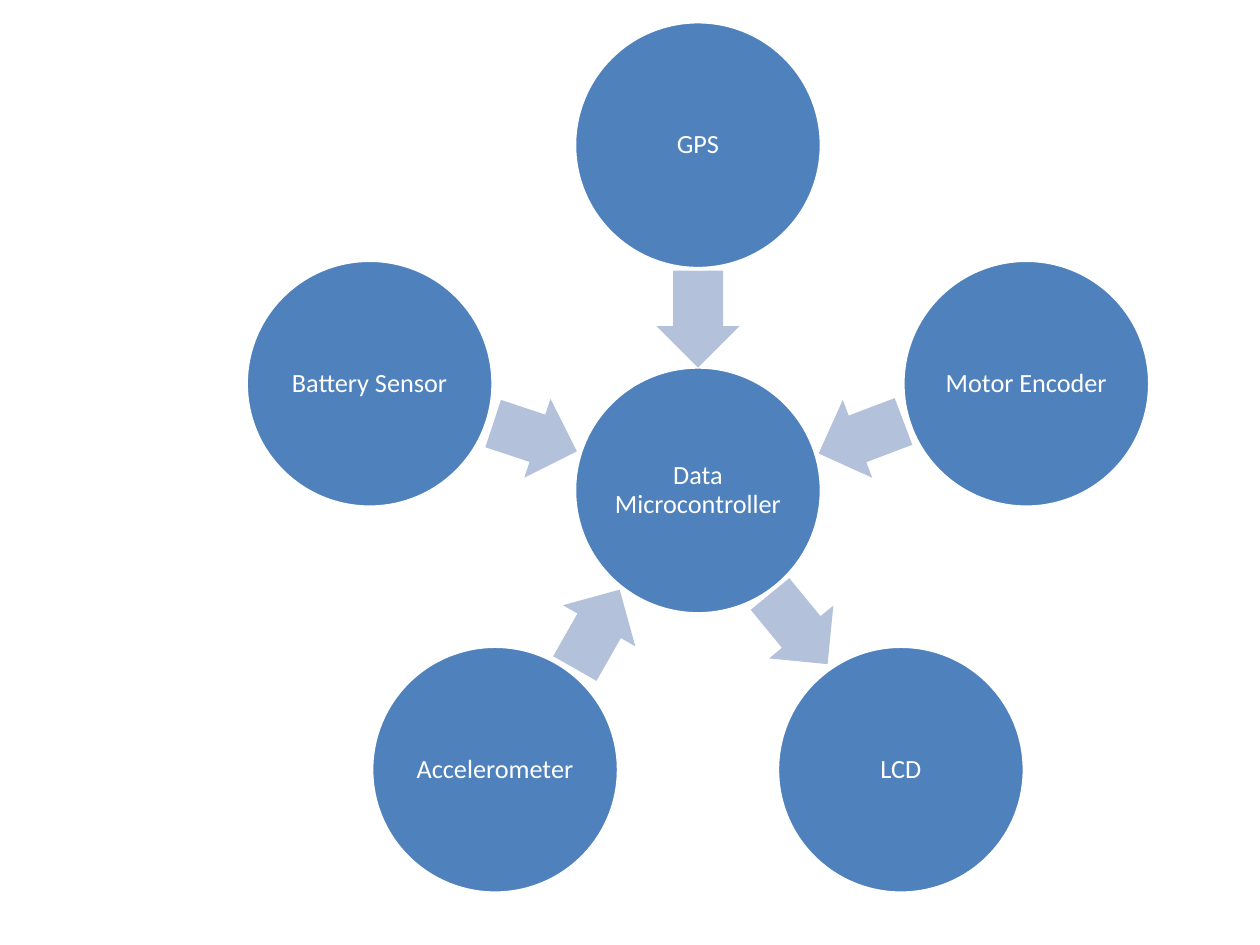
from math import cos, radians, sin

from pptx import Presentation
from pptx.dml.color import RGBColor
from pptx.enum.shapes import MSO_SHAPE as Shape
from pptx.enum.text import MSO_ANCHOR as Anchor, PP_ALIGN as Align
from pptx.util import Inches, Pt

WIDTH, HEIGHT = 10, 7.5

# Lengths as shares of the slide's width, hub height as a share of its height
HUB_X, HUB_Y = WIDTH * 0.554, HEIGHT * 0.519
DIAMETER = WIDTH * 0.196
ORBIT = WIDTH * 0.274
ARROW_ORBIT = WIDTH * 0.136
ARROW_HEIGHT = WIDTH * 0.066

BLUE, PALE_BLUE, WHITE = "4F81BD", "B3C1DB", "FFFFFF"

# Clockwise from the top: label, arrow length, arrow rotation
DEVICES = [
    ("GPS", 0.77, 90),
    ("Motor Encoder", 0.72, 159.3),
    ("LCD", 0.72, 50.6),
    ("Accelerometer", 0.72, 299.6),
    ("Battery Sensor", 0.70, 18.4),
]


def paint(color_format, color):
    color_format.rgb = RGBColor.from_string(color)


def add_centred(page, kind, centre, width, height, fill):
    x, y = centre
    shape = page.shapes.add_shape(
        kind, Inches(x - width / 2), Inches(y - height / 2),
        Inches(width), Inches(height))
    shape.shadow.inherit = False
    shape.fill.solid()
    paint(shape.fill.fore_color, fill)
    return shape


def add_circle(page, centre, label):
    circle = add_centred(page, Shape.OVAL, centre, DIAMETER, DIAMETER, BLUE)
    paint(circle.line.color, WHITE)
    circle.line.width = Pt(2)

    frame = circle.text_frame
    frame.word_wrap = True
    frame.vertical_anchor = Anchor.MIDDLE
    frame.margin_left = frame.margin_right = Inches(0.02)
    frame.margin_top = frame.margin_bottom = Inches(0.02)
    frame.text = label
    para = frame.paragraphs[0]
    para.alignment = Align.CENTER
    para.line_spacing = 0.9
    font = para.runs[0].font
    font.name, font.size = "Calibri", Pt(15)
    paint(font.color, WHITE)


def add_arrow(page, centre, length, rotation):
    arrow = add_centred(
        page, Shape.RIGHT_ARROW, centre, length, ARROW_HEIGHT, PALE_BLUE)
    arrow.line.fill.background()
    arrow.adjustments[0], arrow.adjustments[1] = 0.6, 0.5
    arrow.rotation = rotation


def around_hub(angle, radius):
    return (HUB_X + radius * cos(radians(angle)),
            HUB_Y + radius * sin(radians(angle)))


def main():
    deck = Presentation()
    deck.slide_width, deck.slide_height = Inches(WIDTH), Inches(HEIGHT)
    page = deck.slides.add_slide(deck.slide_layouts[6])

    # Hub
    add_circle(page, (HUB_X, HUB_Y), "Data Microcontroller")

    # Devices evenly spread around the hub, each with its arrow
    for index, (label, length, rotation) in enumerate(DEVICES):
        angle = -90 + index * 360 / len(DEVICES)
        add_arrow(page, around_hub(angle, ARROW_ORBIT), length, rotation)
        add_circle(page, around_hub(angle, ORBIT), label)

    deck.save("out.pptx")


if __name__ == "__main__":
    main()
